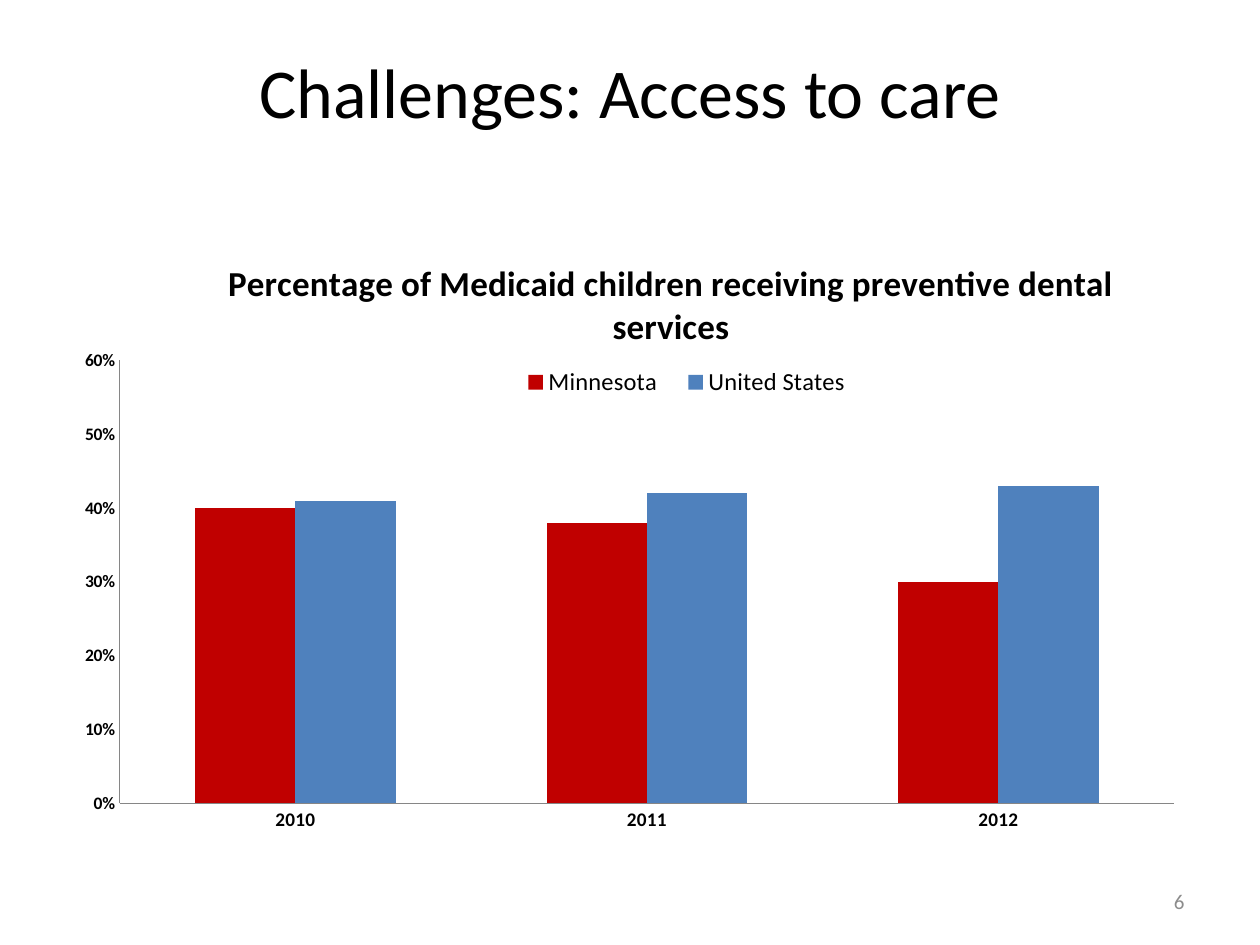
import dataclasses

import lxml.etree
import pptx
import pptx.chart.data
import pptx.dml.color
import pptx.enum.chart
import pptx.enum.text
import pptx.oxml.ns
import pptx.util

WIDTH, HEIGHT = 10, 7.5
FONT = "Calibri"
BLACK, GREY, AXIS_GREY = "000000", "8C8C8C", "868686"
ALIGN = pptx.enum.text.PP_ALIGN
YEARS = ["2010", "2011", "2012"]


@dataclasses.dataclass
class Area:
    """Left, top, width and height as shares of the slide."""
    left: float
    top: float
    width: float
    height: float

    def lengths(self) -> list[int]:
        return [pptx.util.Inches(share * side) for share, side in
                ((self.left, WIDTH), (self.top, HEIGHT),
                 (self.width, WIDTH), (self.height, HEIGHT))]


@dataclasses.dataclass
class Label:
    text: str
    area: Area
    size: float
    color: str
    align: ALIGN


@dataclasses.dataclass
class Region:
    name: str
    color: str
    shares: list[float]


LABELS = [
    Label("Challenges: Access to care", Area(0.05, 0.037, 0.9, 0.117), 40, BLACK, ALIGN.CENTER),
    Label("6", Area(0.717, 0.927, 0.233, 0.053), 12, GREY, ALIGN.RIGHT),
]
REGIONS = [
    Region("Minnesota", "C00000", [0.4, 0.38, 0.3]),
    Region("United States", "4F81BD", [0.41, 0.42, 0.43]),
]


def rgb(color: str) -> pptx.dml.color.RGBColor:
    return pptx.dml.color.RGBColor.from_string(color)


def style_font(font, size: float, color: str = BLACK, bold: bool = False) -> None:
    font.name = FONT
    font.size = pptx.util.Pt(size)
    font.bold = bold
    font.color.rgb = rgb(color)


def add_label(slide, label: Label) -> None:
    frame = slide.shapes.add_textbox(*label.area.lengths()).text_frame
    frame.word_wrap = True
    frame.vertical_anchor = pptx.enum.text.MSO_ANCHOR.MIDDLE
    para = frame.paragraphs[0]
    para.text = label.text
    para.alignment = label.align
    style_font(para.font, label.size, label.color)


def place_in_chart(element, inner: bool = False, **shares: float) -> None:
    """Set a manual layout, in shares of the chart's size."""
    qn = pptx.oxml.ns.qn
    for old in element.findall(qn("c:layout")):
        element.remove(old)
    layout = lxml.etree.Element(qn("c:layout"))
    manual = lxml.etree.SubElement(layout, qn("c:manualLayout"))
    settings = {"layoutTarget": "inner"} if inner else {}
    settings |= {"xMode": "edge", "yMode": "edge"} | shares
    for tag, value in settings.items():
        lxml.etree.SubElement(manual, qn(f"c:{tag}")).set("val", str(value))
    overlay = element.find(qn("c:overlay"))
    element.insert(0 if overlay is None else element.index(overlay), layout)


def style_axis(axis, size: float) -> None:
    axis.has_major_gridlines = False
    axis.major_tick_mark = axis.minor_tick_mark = pptx.enum.chart.XL_TICK_MARK.NONE
    axis.format.line.color.rgb = rgb(AXIS_GREY)
    axis.format.line.width = pptx.util.Pt(0.75)
    style_font(axis.tick_labels.font, size, bold=True)


def add_access_chart(slide, area: Area) -> None:
    data = pptx.chart.data.CategoryChartData(number_format="0%")
    data.categories = YEARS
    for region in REGIONS:
        data.add_series(region.name, region.shares)
    chart = slide.shapes.add_chart(
        pptx.enum.chart.XL_CHART_TYPE.COLUMN_CLUSTERED, *area.lengths(), data).chart
    style_font(chart.font, 10)

    title = chart.chart_title
    para = title.text_frame.paragraphs[0]
    para.text = "Percentage of Medicaid children receiving preventive dental services"
    style_font(para.font, 20, bold=True)
    place_in_chart(title._element, x=0.14, y=0.05)

    chart.has_legend = True
    legend = chart.legend
    legend.position = pptx.enum.chart.XL_LEGEND_POSITION.TOP
    legend.include_in_layout = True
    style_font(legend.font, 14)
    place_in_chart(legend._element, x=0.39, y=0.23, w=0.32, h=0.06)

    style_axis(chart.category_axis, 11)
    values = chart.value_axis
    style_axis(values, 10)
    values.minimum_scale, values.maximum_scale, values.major_unit = 0, 0.6, 0.1
    values.tick_labels.number_format = "0%"
    values.tick_labels.number_format_is_linked = False

    plot = chart.plots[0]
    plot.gap_width, plot.overlap = 150, 0
    plot.vary_by_categories = False
    for series, region in zip(plot.series, REGIONS):
        series.format.fill.solid()
        series.format.fill.fore_color.rgb = rgb(region.color)
    plot_area = chart._chartSpace.chart.plotArea
    place_in_chart(plot_area, inner=True, x=0.05, y=0.225, w=0.93, h=0.71)


def main() -> None:
    deck = pptx.Presentation()
    deck.slide_width = pptx.util.Inches(WIDTH)
    deck.slide_height = pptx.util.Inches(HEIGHT)
    slide = deck.slides.add_slide(deck.slide_layouts[6])
    for label in LABELS:
        add_label(slide, label)
    add_access_chart(slide, Area(0.05, 0.233, 0.9, 0.66))
    deck.save("out.pptx")


if __name__ == "__main__":
    main()
